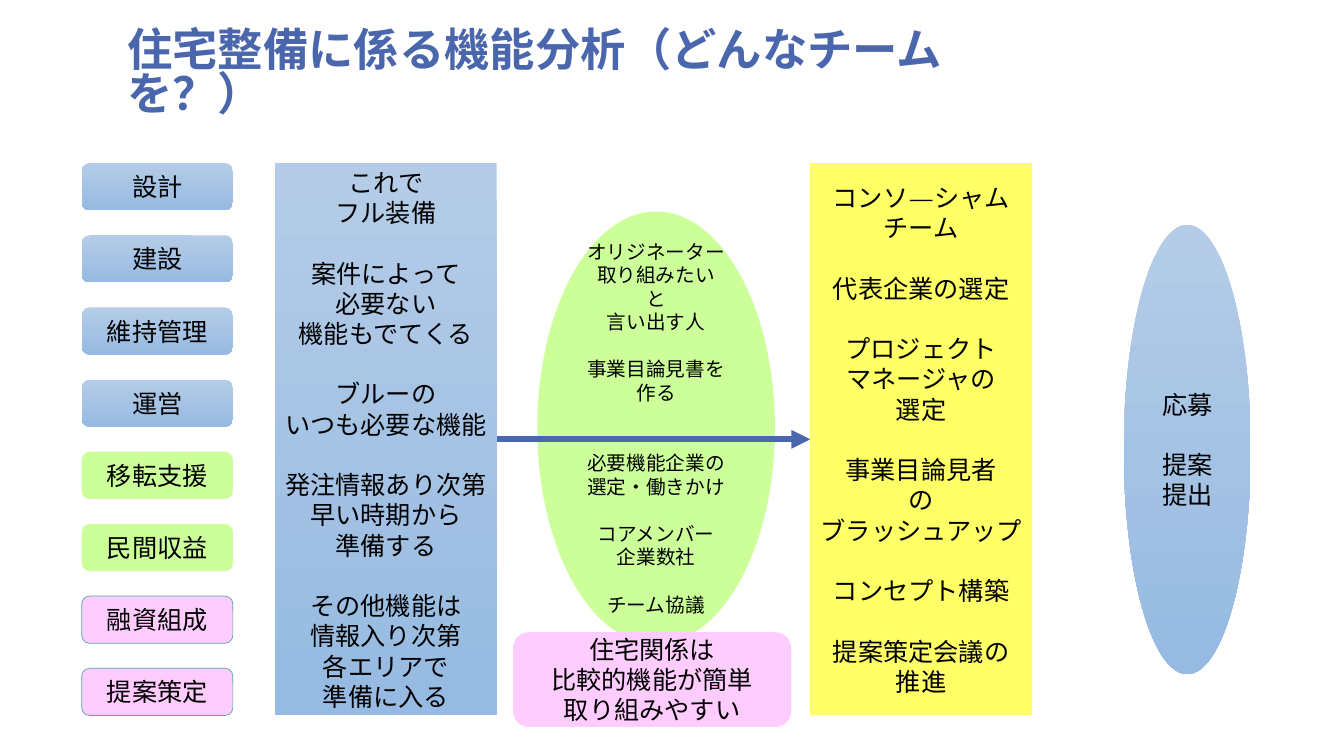
from lxml.etree import SubElement
from pptx import Presentation
from pptx.dml.color import RGBColor
from pptx.enum.shapes import MSO_CONNECTOR, MSO_SHAPE
from pptx.enum.text import MSO_ANCHOR, PP_ALIGN
from pptx.oxml.ns import qn
from pptx.util import Cm, Pt

NAVY = RGBColor(0x4A, 0x66, 0xAC)
BLACK = RGBColor(0, 0, 0)
SKY = RGBColor(0xB4, 0xCC, 0xE7)
BLUE = RGBColor(0x96, 0xBA, 0xE1)
GREEN = RGBColor(0xCC, 0xFF, 0x99)
PINK = RGBColor(0xFF, 0xCC, 0xFF)
YELLOW = RGBColor(0xFF, 0xFF, 0x66)
TEAL = RGBColor(0x5A, 0xA2, 0xAE)
BLUES = [SKY, BLUE]

TITLE = "住宅整備に係る機能分析（どんなチームを？）"
FUNCTIONS = [
    ("設計", BLUES, None), ("建設", BLUES, None),
    ("維持管理", BLUES, None), ("運営", BLUES, None),
    ("移転支援", GREEN, None), ("民間収益", GREEN, None),
    ("融資組成", PINK, TEAL), ("提案策定", PINK, TEAL),
]
EQUIPMENT = [
    ["これで", "フル装備"],
    ["案件によって", "必要ない", "機能もでてくる"],
    ["ブルーの", "いつも必要な機能"],
    ["発注情報あり次第", "早い時期から", "準備する"],
    ["その他機能は", "情報入り次第", "各エリアで", "準備に入る"],
]
ORIGINATOR = [
    ["オリジネーター", "取り組みたい", "と", "言い出す人"],
    ["事業目論見書を作る"],
    [],
    ["必要機能企業の", "選定・働きかけ"],
    ["コアメンバー", "企業数社"],
    ["チーム協議"],
]
CONSORTIUM = [
    ["コンソ―シャムチーム"],
    ["代表企業の選定"],
    ["プロジェクト", "マネージャの", "選定"],
    ["事業目論見者", "の", "ブラッシュアップ"],
    ["コンセプト構築"],
    ["提案策定会議の", "推進"],
]
APPLICATION = [["応募"], ["提案提出"]]
HOUSING = [["住宅関係は", "比較的機能が簡単", "取り組みやすい"]]

TOP, COLUMN_HEIGHT, COLUMN_WIDTH = 4.11, 13.92, 5.59
CHIP_LEFT, CHIP_WIDTH, CHIP_HEIGHT = 2.06, 3.81, 1.19
CHIP_PITCH = (COLUMN_HEIGHT - CHIP_HEIGHT) / (len(FUNCTIONS) - 1)
BLANK_LINE = 1.2


def write(frame, groups, size=18, font="Vollkorn", color=BLACK, bold=False,
          align=PP_ALIGN.CENTER, anchor=MSO_ANCHOR.MIDDLE, spacing=None):
    """Write groups of lines, one blank line's space before each later group."""
    frame.word_wrap = True
    frame.vertical_anchor = anchor
    paragraph, gap = None, 0
    for group in groups:
        for line in group:
            paragraph = frame.add_paragraph() if paragraph else frame.paragraphs[0]
            paragraph.alignment = align
            paragraph.space_before = Pt(gap)
            if spacing:
                paragraph.line_spacing = spacing
            run = paragraph.add_run()
            run.text = line
            run.font.size, run.font.name, run.font.bold = Pt(size), font, bold
            run.font.color.rgb = color
            SubElement(run.font._element, qn("a:ea"), typeface=font)
            gap = 0
        gap += size * BLANK_LINE


def add_panel(slide, kind, box, groups, fill, outline=None, size=18):
    """Add a filled shape holding groups of lines."""
    panel = slide.shapes.add_shape(kind, *map(Cm, box))
    panel.shadow.inherit = False
    if fill is BLUES:
        panel.fill.gradient()
        panel.fill.gradient_angle = 270
        for stop, color in zip(panel.fill.gradient_stops, fill):
            stop.color.rgb = color
    else:
        panel.fill.solid()
        panel.fill.fore_color.rgb = fill
    if outline:
        panel.line.color.rgb = outline
        panel.line.width = Pt(0.5)
    else:
        panel.line.fill.background()
    panel.text_frame.margin_left = panel.text_frame.margin_right = Cm(0.2)
    write(panel.text_frame, groups, size=size)
    return panel


def add_arrow(slide, source, target):
    """Join the right side of source to the left side of target."""
    arrow = slide.shapes.add_connector(MSO_CONNECTOR.STRAIGHT, 0, 0, 0, 0)
    arrow.begin_connect(source, 3)
    arrow.end_connect(target, 1)
    arrow.line.color.rgb = NAVY
    arrow.line.width = Pt(4.5)
    SubElement(arrow.line._get_or_add_ln(), qn("a:tailEnd"), type="triangle")
    SubElement(arrow._element.spPr, qn("a:effectLst"))
    return arrow


def main():
    """Build the slide and save it."""
    deck = Presentation()
    deck.slide_width, deck.slide_height = Cm(33.87), Cm(19.05)
    slide = deck.slides.add_slide(deck.slide_layouts[5])

    title = slide.shapes.title
    title.left, title.top, title.width, title.height = map(Cm, (2.95, 1.47, 24.13, 1.65))
    write(title.text_frame, [[TITLE]], size=32.4, font="Noto Sans CJK JP", color=NAVY,
          bold=True, align=PP_ALIGN.LEFT, anchor=MSO_ANCHOR.BOTTOM, spacing=0.8)

    for row, (function, fill, outline) in enumerate(FUNCTIONS):
        box = (CHIP_LEFT, TOP + row * CHIP_PITCH, CHIP_WIDTH, CHIP_HEIGHT)
        add_panel(slide, MSO_SHAPE.ROUNDED_RECTANGLE, box, [[function]], fill, outline)

    equipment = add_panel(slide, MSO_SHAPE.RECTANGLE,
                          (6.93, TOP, COLUMN_WIDTH, COLUMN_HEIGHT), EQUIPMENT, BLUES)
    add_panel(slide, MSO_SHAPE.OVAL, (13.54, 5.33, 5.99, 10.9), ORIGINATOR, GREEN, size=14)
    consortium = add_panel(slide, MSO_SHAPE.RECTANGLE,
                           (20.42, TOP, COLUMN_WIDTH, COLUMN_HEIGHT), CONSORTIUM, YELLOW)
    add_arrow(slide, equipment, consortium)
    add_panel(slide, MSO_SHAPE.OVAL, (28.32, 5.66, 3.2, 11.33), APPLICATION, BLUES)
    add_panel(slide, MSO_SHAPE.ROUNDED_RECTANGLE, (12.93, 15.93, 7.01, 2.39), HOUSING, PINK)

    deck.save("out.pptx")


if __name__ == "__main__":
    main()
